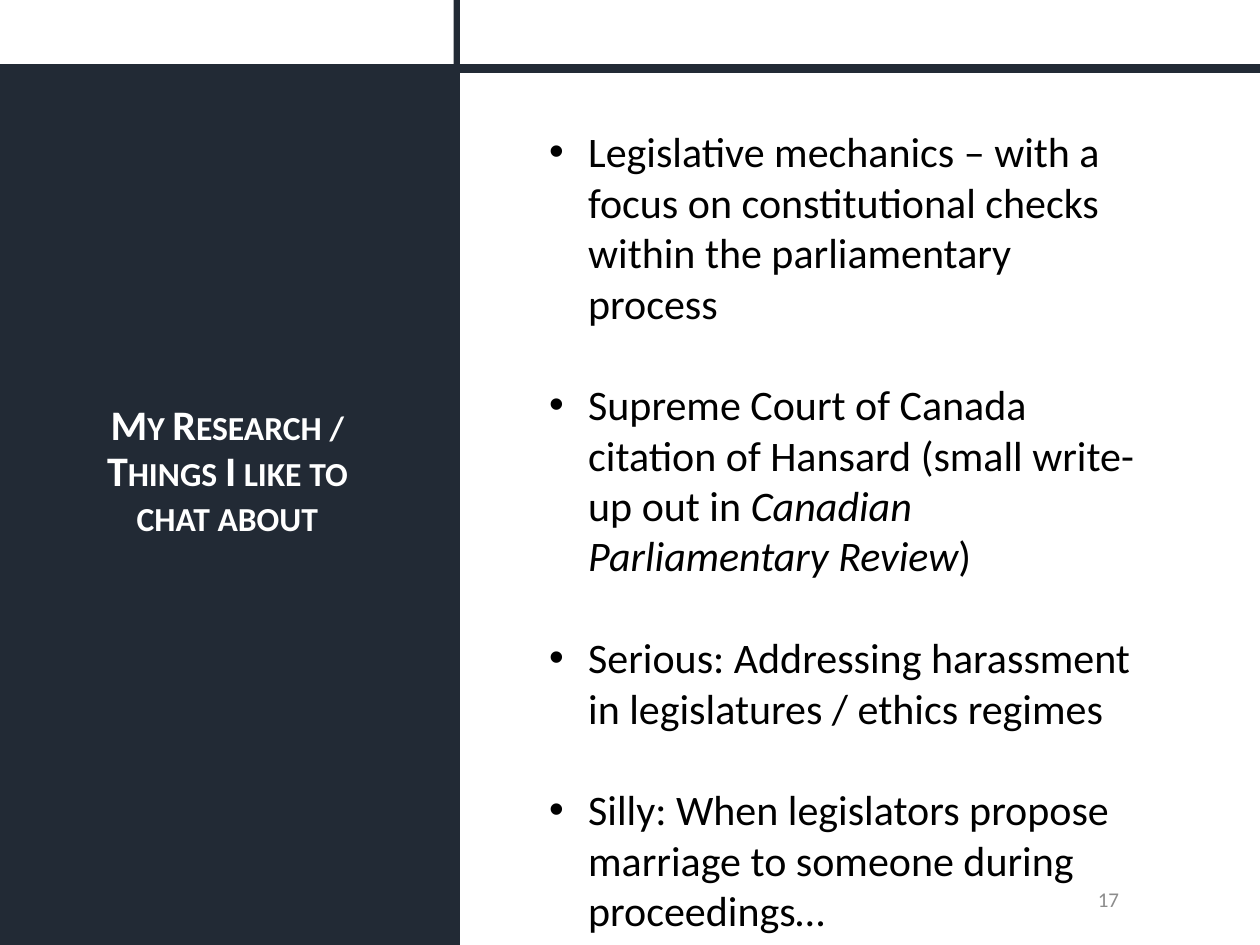
from pptx import Presentation
from pptx.dml.color import RGBColor
from pptx.enum.shapes import MSO_SHAPE as Shape
from pptx.enum.text import MSO_ANCHOR as Anchor, PP_ALIGN as Align
from pptx.oxml.ns import qn
from pptx.util import Inches, Pt
from lxml.etree import SubElement

WIDTH, HEIGHT = 10, 7.5
RULE_TOP, RULE_HEIGHT = 0.51, 0.07
PANEL_TOP = RULE_TOP + RULE_HEIGHT
PANEL_WIDTH, DIVIDER_WIDTH = 3.65, 0.05
NAVY, WHITE, BLACK, GREY = "222A35", "FFFFFF", "000000", "8C8C8C"
INDENT = Inches(0.31)
LINE_GAP = Pt(29.3)

TITLE = "My Research / Things I like to chat about"
# Each topic is a list of (text, italic) pieces.
TOPICS = [
    [("Legislative mechanics – with a focus on constitutional checks "
      "within the parliamentary process", False)],
    [("Supreme Court of Canada citation of Hansard (small write-up out in ", False),
     ("Canadian Parliamentary Review", True), (")", False)],
    [("Serious: Addressing harassment in legislatures / ethics regimes", False)],
    [("Silly: When legislators propose marriage to someone during proceedings…", False)],
]


def color(hex_string):
    return RGBColor.from_string(hex_string)


def style(font, size, hex_string):
    font.name, font.size = "Calibri", Pt(size)
    font.color.rgb = color(hex_string)


def add_block(slide, box, fill=NAVY):
    shape = slide.shapes.add_shape(Shape.RECTANGLE, *map(Inches, box))
    shape.shadow.inherit = False
    shape.fill.solid()
    shape.fill.fore_color.rgb = color(fill)
    shape.line.fill.background()


def add_frame(slide):
    """Dark panel with the vertical and horizontal rules."""
    add_block(slide, (0, PANEL_TOP, PANEL_WIDTH, HEIGHT - PANEL_TOP))
    add_block(slide, (PANEL_WIDTH - DIVIDER_WIDTH, 0, DIVIDER_WIDTH, HEIGHT))
    add_block(slide, (0, RULE_TOP, WIDTH, RULE_HEIGHT))


def add_title(slide, box):
    text_frame = slide.shapes.add_textbox(*map(Inches, box)).text_frame
    text_frame.word_wrap = True
    text_frame.vertical_anchor = Anchor.MIDDLE
    text_frame.text = TITLE
    paragraph = text_frame.paragraphs[0]
    paragraph.alignment, paragraph.line_spacing = Align.CENTER, 0.9
    run = paragraph.runs[0]
    style(run.font, 24, WHITE)
    run.font.bold = True
    run.font._element.set("cap", "small")


def add_bullet(paragraph):
    properties = paragraph._p.get_or_add_pPr()
    properties.set("marL", str(INDENT))
    properties.set("indent", str(-INDENT))
    SubElement(properties, qn("a:buFont")).set("typeface", "Arial")
    SubElement(properties, qn("a:buChar")).set("char", "•")


def add_topics(slide, box):
    text_frame = slide.shapes.add_textbox(*map(Inches, box)).text_frame
    text_frame.word_wrap = True
    for index, pieces in enumerate(TOPICS):
        paragraph = text_frame.add_paragraph() if index else text_frame.paragraphs[0]
        add_bullet(paragraph)
        if index:
            paragraph.space_before = LINE_GAP
        for text, italic in pieces:
            run = paragraph.add_run()
            run.text = text
            style(run.font, 24, BLACK)
            run.font.italic = italic


def add_page_number(slide, box, number):
    shape = slide.shapes.add_shape(Shape.OVAL, *map(Inches, box))
    shape.shadow.inherit = False
    shape.fill.background()
    shape.line.fill.background()
    text_frame = shape.text_frame
    text_frame.vertical_anchor = Anchor.MIDDLE
    text_frame.text = str(number)
    paragraph = text_frame.paragraphs[0]
    paragraph.alignment, paragraph.line_spacing = Align.RIGHT, 0.9
    paragraph.space_after = Pt(6)
    style(paragraph.runs[0].font, 12, GREY)


def main():
    presentation = Presentation()
    presentation.slide_width, presentation.slide_height = Inches(WIDTH), Inches(HEIGHT)
    slide = presentation.slides.add_slide(presentation.slide_layouts[6])
    add_frame(slide)
    add_title(slide, (0.49, 0.84, 2.63, 5.82))
    add_page_number(slide, (7.06, 6.95, 2.25, 0.4), 17)
    add_topics(slide, (4.26, 0.95, 4.92, 6.97))
    presentation.save("out.pptx")


if __name__ == "__main__":
    main()
